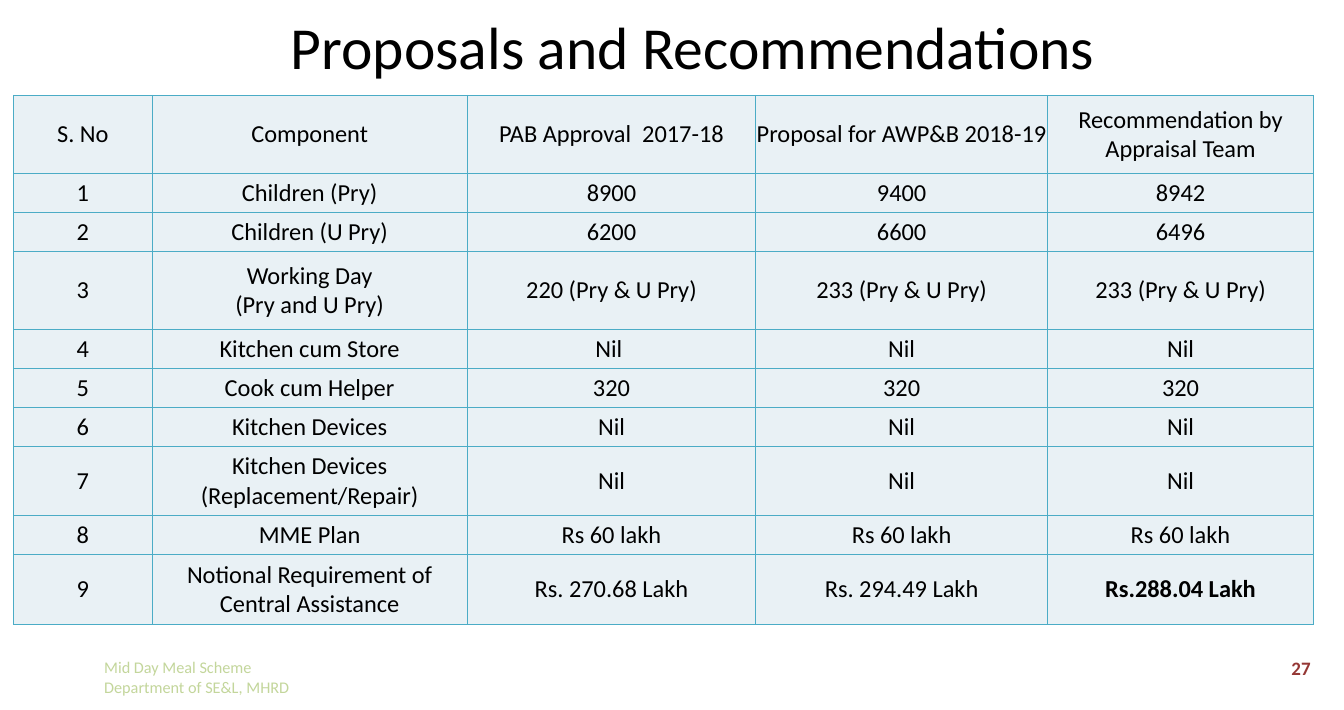
from dataclasses import dataclass

from lxml import etree
from pptx import Presentation
from pptx.dml.color import RGBColor
from pptx.enum.text import MSO_ANCHOR, PP_ALIGN
from pptx.oxml.ns import qn
from pptx.slide import Slide
from pptx.table import _Cell
from pptx.text.text import TextFrame
from pptx.util import Pt

LEFT, CENTER = PP_ALIGN.LEFT, PP_ALIGN.CENTER
MIDDLE = MSO_ANCHOR.MIDDLE

BLACK = RGBColor(0x00, 0x00, 0x00)
PALE_BLUE = RGBColor(0xE9, 0xF1, 0xF5)
TEAL = RGBColor(0x4B, 0xAC, 0xC6)
GREEN = RGBColor(0xC3, 0xD6, 0x9B)
DARK_RED = RGBColor(0x95, 0x37, 0x35)
FONT = "Calibri"


@dataclass(frozen=True)
class TextStyle:
    size: float
    color: RGBColor
    align: PP_ALIGN = CENTER
    bold: bool = False


@dataclass(frozen=True)
class Label:
    lines: tuple[str, ...]
    left: float
    top: float
    width: float
    height: float
    style: TextStyle


@dataclass(frozen=True)
class Row:
    height: float
    cells: tuple[str, ...]


TITLE_STYLE = TextStyle(44, BLACK)
CELL_STYLE = TextStyle(18, BLACK)
TOTAL_STYLE = TextStyle(18, BLACK, bold=True)

LABELS = (
    Label(("Mid Day Meal Scheme", "Department of SE&L, MHRD"),
          69.84, 477.36, 318.96, 44.64, TextStyle(12, GREEN, LEFT)),
    Label(("27",), 927.36, 472.32, 66.24, 41.76,
          TextStyle(14, DARK_RED, bold=True)),
)

COLUMN_WIDTHS = (102.24, 232.56, 213.12, 215.28, 196.56)
SINGLE, DOUBLE, TALL = 28.8, 51.12, 57.6
HEADER = Row(TALL, ("S. No", "Component", "PAB Approval  2017-18",
                    "Proposal for AWP&B 2018-19",
                    "Recommendation by Appraisal Team"))
# Component rows; the serial number is added when the table is drawn
COMPONENTS = (
    Row(SINGLE, ("Children (Pry)", "8900", "9400", "8942")),
    Row(SINGLE, ("Children (U Pry)", "6200", "6600", "6496")),
    Row(TALL, ("Working Day\n(Pry and U Pry)", "220 (Pry & U Pry)",
               "233 (Pry & U Pry)", "233 (Pry & U Pry)")),
    Row(SINGLE, ("Kitchen cum Store", "Nil ", "Nil", "Nil")),
    Row(SINGLE, ("Cook cum Helper", "320", "320", "320")),
    Row(SINGLE, ("Kitchen Devices", "Nil", "Nil", "Nil")),
    Row(DOUBLE, ("Kitchen Devices (Replacement/Repair)", "Nil", "Nil", "Nil")),
    Row(SINGLE, ("MME Plan", "Rs 60 lakh", "Rs 60 lakh", "Rs 60 lakh")),
    Row(DOUBLE, ("Notional Requirement of Central Assistance",
                 "Rs. 270.68 Lakh", "Rs. 294.49 Lakh", "Rs.288.04 Lakh")),
)


def write(tf: TextFrame, lines: tuple[str, ...], style: TextStyle) -> None:
    tf.word_wrap = True
    for i, line in enumerate(lines):
        p = tf.paragraphs[0] if i == 0 else tf.add_paragraph()
        p.text = line
        p.alignment = style.align
        for r in p.runs:
            r.font.name = FONT
            r.font.size = Pt(style.size)
            r.font.bold = style.bold
            r.font.color.rgb = style.color


def add_borders(cell: _Cell, color: RGBColor, width: float) -> None:
    tc_pr = cell._tc.get_or_add_tcPr()
    for side in ("a:lnL", "a:lnR", "a:lnT", "a:lnB"):
        ln = etree.SubElement(tc_pr, qn(side), w=str(Pt(width)))
        fill = etree.SubElement(ln, qn("a:solidFill"))
        etree.SubElement(fill, qn("a:srgbClr"), val=str(color))


def format_cell(cell: _Cell, text: str, style: TextStyle) -> None:
    write(cell.text_frame, (text,), style)
    cell.vertical_anchor = MIDDLE
    cell.margin_left = cell.margin_right = Pt(0)
    cell.margin_top = cell.margin_bottom = Pt(0)
    add_borders(cell, TEAL, 1)
    cell.fill.solid()
    cell.fill.fore_color.rgb = PALE_BLUE


def add_title(s: Slide, text: str) -> None:
    sp = s.shapes.title
    sp.left, sp.top, sp.width, sp.height = Pt(90.72), Pt(-0.72), Pt(851.76), Pt(68.4)
    sp.text_frame.vertical_anchor = MIDDLE
    write(sp.text_frame, (text,), TITLE_STYLE)


def add_label(s: Slide, label: Label) -> None:
    sp = s.shapes.add_textbox(Pt(label.left), Pt(label.top),
                              Pt(label.width), Pt(label.height))
    sp.text_frame.vertical_anchor = MIDDLE
    write(sp.text_frame, label.lines, label.style)


def add_proposals(s: Slide) -> None:
    rows = [HEADER] + [Row(row.height, (str(n), *row.cells))
                       for n, row in enumerate(COMPONENTS, start=1)]
    table = s.shapes.add_table(
        len(rows), len(COLUMN_WIDTHS), Pt(10.08), Pt(70.56),
        Pt(sum(COLUMN_WIDTHS)), Pt(sum(row.height for row in rows))).table
    table.first_row = table.horz_banding = False
    for column, width in zip(table.columns, COLUMN_WIDTHS):
        column.width = Pt(width)
    last = (len(rows) - 1, len(COLUMN_WIDTHS) - 1)
    for i, row in enumerate(rows):
        table.rows[i].height = Pt(row.height)
        for j, text in enumerate(row.cells):
            style = TOTAL_STYLE if (i, j) == last else CELL_STYLE
            format_cell(table.cell(i, j), text, style)


def main() -> None:
    prs = Presentation()
    prs.slide_width, prs.slide_height = Pt(992.16), Pt(524.16)
    s = prs.slides.add_slide(prs.slide_layouts[5])

    # Title
    add_title(s, "Proposals and Recommendations ")

    # Footer and page number
    for label in LABELS:
        add_label(s, label)

    # Proposals table
    add_proposals(s)

    prs.save("out.pptx")


if __name__ == "__main__":
    main()
